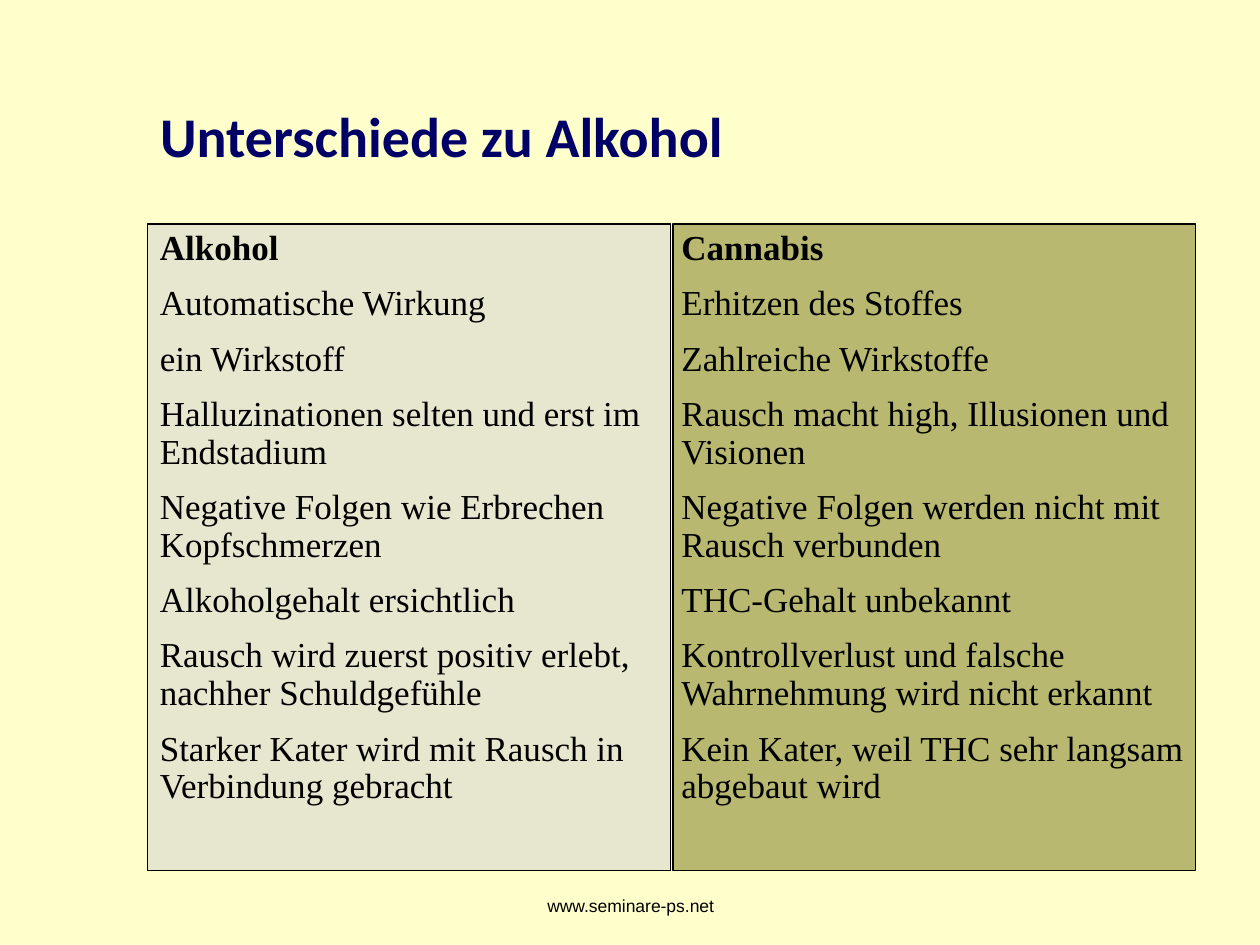
from dataclasses import dataclass

from pptx import Presentation
from pptx import util as u
from pptx.dml.color import RGBColor
from pptx.enum import shapes, text


@dataclass(frozen=True)
class Theme:
    """Colours, fonts and type sizes of the deck."""
    background: str = "FFFFCC"
    navy: str = "000066"
    ink: str = "000000"
    sand: str = "E7E7CF"
    olive: str = "B8B870"
    title_font: str = "Calibri"
    body_font: str = "Times New Roman"
    footer_font: str = "Arial"
    title_size: int = 32
    body_size: int = 20
    footer_size: int = 10


def write(para, words, *, font, size, color, bold=False,
          align=text.PP_ALIGN.LEFT, before=0, spacing=1.0):
    """Put formatted text into a paragraph."""
    para.alignment = align
    para.space_before = u.Pt(before)
    para.line_spacing = spacing
    span = para.add_run()
    span.text = words
    span.font.name = font
    span.font.size = u.Pt(size)
    span.font.bold = bold
    span.font.color.rgb = RGBColor.from_string(color)


class Page:
    """A title-only slide with its style and element methods."""

    def __init__(self, deck, theme):
        """Add the slide and colour its background."""
        self.deck, self.theme = deck, theme
        self.slide = deck.slides.add_slide(deck.slide_layouts[5])
        fill = self.slide.background.fill
        fill.solid()
        fill.fore_color.rgb = RGBColor.from_string(theme.background)

    def area(self, left, top, width, height):
        """Turn shares of the slide into lengths."""
        across, down = self.deck.slide_width, self.deck.slide_height
        return (u.Emu(round(left * across)), u.Emu(round(top * down)),
                u.Emu(round(width * across)), u.Emu(round(height * down)))

    def title(self, words, area):
        """Place and format the title."""
        box = self.slide.shapes.title
        box.left, box.top, box.width, box.height = self.area(*area)
        frame = box.text_frame
        frame.vertical_anchor = text.MSO_ANCHOR.MIDDLE
        write(frame.paragraphs[0], words, font=self.theme.title_font,
              size=self.theme.title_size, color=self.theme.navy, bold=True)

    def panel(self, color, area):
        """Draw a filled rectangle with a thin outline."""
        box = self.slide.shapes.add_shape(
            shapes.MSO_SHAPE.RECTANGLE, *self.area(*area))
        box.shadow.inherit = False
        box.fill.solid()
        box.fill.fore_color.rgb = RGBColor.from_string(color)
        box.line.color.rgb = RGBColor.from_string(self.theme.ink)
        box.line.width = u.Pt(0.75)

    def text_frame(self, area):
        """Add a wrapping text box and return its frame."""
        frame = self.slide.shapes.add_textbox(*self.area(*area)).text_frame
        frame.word_wrap = True
        return frame

    def column(self, heading, entries, area):
        """Write a bold heading and the entries below it."""
        theme, frame = self.theme, self.text_frame(area)
        style = dict(font=theme.body_font, size=theme.body_size,
                     color=theme.ink, spacing=0.9)
        write(frame.paragraphs[0], heading, bold=True, **style)
        for entry in entries:
            write(frame.add_paragraph(), entry,
                  before=theme.body_size / 2, **style)

    def footer(self, words, area):
        """Write the centred footer line."""
        write(self.text_frame(area).paragraphs[0], words,
              font=self.theme.footer_font, size=self.theme.footer_size,
              color=self.theme.ink, align=text.PP_ALIGN.CENTER)


def main():
    """Build and save the comparison slide."""
    deck = Presentation()
    deck.slide_width, deck.slide_height = u.Inches(10), u.Inches(7.5)
    theme = Theme()
    page = Page(deck, theme)

    left, top, width, pitch = 0.117, 0.237, 0.415, 0.417
    panel_height, text_height = 0.684, 0.65
    columns = [
        ("Alkohol", theme.sand, 0, [
            "Automatische Wirkung",
            "ein Wirkstoff",
            "Halluzinationen selten und erst im Endstadium",
            "Negative Folgen wie Erbrechen Kopfschmerzen",
            "Alkoholgehalt ersichtlich",
            "Rausch wird zuerst positiv erlebt, nachher Schuldgefühle",
            "Starker Kater wird mit Rausch in Verbindung gebracht",
        ]),
        ("Cannabis", theme.olive, -0.003, [
            "Erhitzen des Stoffes",
            "Zahlreiche Wirkstoffe",
            "Rausch macht high, Illusionen und Visionen",
            "Negative Folgen werden nicht mit Rausch verbunden",
            "THC-Gehalt unbekannt",
            "Kontrollverlust und falsche Wahrnehmung wird nicht erkannt",
            "Kein Kater, weil THC sehr langsam abgebaut wird",
        ]),
    ]

    page.footer("www.seminare-ps.net", (0.342, 0.941, 0.317, 0.037))
    page.title("Unterschiede zu Alkohol", (left, 0.059, 0.84, 0.167))
    for index, (_, color, _, _) in enumerate(columns):
        page.panel(color, (left + index * pitch, top, width, panel_height))
    for index, (heading, _, shift, entries) in enumerate(columns):
        page.column(heading, entries, (left + index * pitch + shift, top,
                                       0.42, text_height))
    deck.save("out.pptx")


if __name__ == "__main__":
    main()
